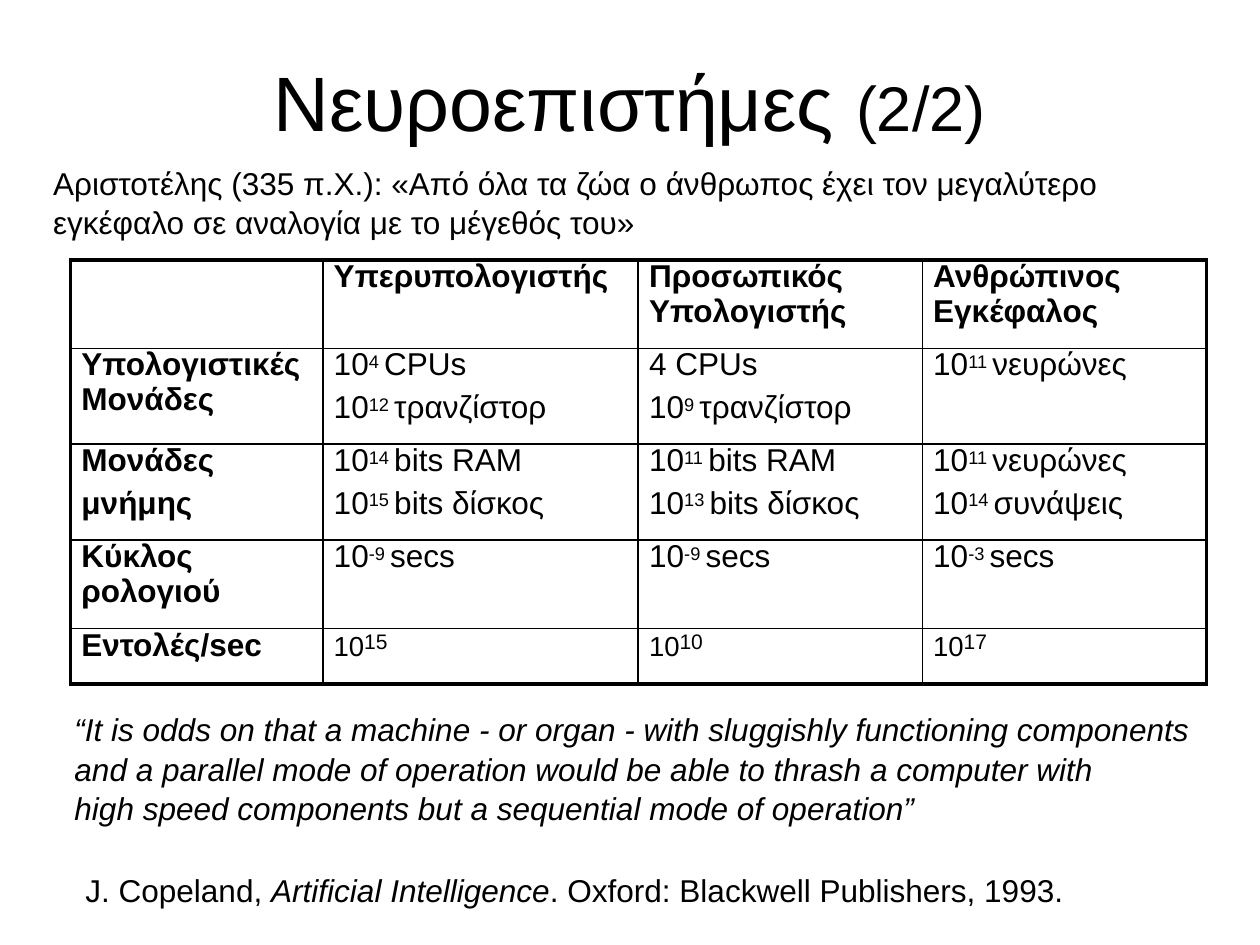
"""Build the Greek slide comparing computers with the human brain."""
from lxml.etree import SubElement
from pptx import Presentation
from pptx.dml.color import RGBColor
from pptx.enum.text import MSO_ANCHOR
from pptx.oxml import parse_xml
from pptx.oxml.ns import nsdecls, qn
from pptx.util import Cm, Pt

BLACK = RGBColor(0, 0, 0)
FONT = "Arial"
THICK, THIN = 2.25, 1

ROWS = [
    ["", "Υπερυπολογιστής", "Προσωπικός Υπολογιστής", "Ανθρώπινος Εγκέφαλος"],
    ["Υπολογιστικές Μονάδες", "10^4 ^CPUs\n10^12 ^τρανζίστορ",
     "4 CPUs\n10^9 ^τρανζίστορ", "10^11 ^νευρώνες"],
    ["Μονάδες\nμνήμης", "10^14 ^bits RΑΜ\n10^15 ^bits δίσκος",
     "10^11 ^bits RΑΜ\n10^13 ^bits δίσκος", "10^11 ^νευρώνες\n10^14 ^συνάψεις"],
    ["Κύκλος ρολογιού", "10^-9 ^secs", "10^-9 ^secs", "10^-3 ^secs"],
    ["Εντολές/sec", "10^15", "10^10", "10^17"],
]
COLUMN_WIDTHS = [5.08, 6.35, 5.72, 5.72]
ROW_HEIGHTS = [1.78, 1.93, 1.93, 1.78, 1.12]


class SlideWriter:
    """Hold the text style and the current slide."""

    def __init__(self, page):
        self.page = page

    def span(self, para, text, size=18, bold=False, italic=False, baseline=0):
        """Add one formatted run."""
        span = para.add_run()
        span.text = text
        font = span.font
        font.name, font.size, font.bold, font.italic = FONT, Pt(size), bold, italic
        font.color.rgb = BLACK
        if baseline:
            span._r.get_or_add_rPr().set("baseline", str(baseline * 1000))

    def layout(self, para, indent=0, before=0, spacing=1.04):
        """Set the indent and spacing of a paragraph."""
        para._p.get_or_add_pPr().set("marL", str(Cm(indent)))
        para.space_before = Pt(before)
        para.line_spacing = spacing

    def box(self, left, top, width, height, paragraphs, anchor=MSO_ANCHOR.TOP):
        """Add a text box from (layout, spans) pairs."""
        frame = self.page.shapes.add_textbox(
            Cm(left), Cm(top), Cm(width), Cm(height)).text_frame
        frame.word_wrap = True
        frame.vertical_anchor = anchor
        frame.margin_left = frame.margin_top = frame.margin_right = frame.margin_bottom = 0
        for index, (layout, spans) in enumerate(paragraphs):
            para = frame.add_paragraph() if index else frame.paragraphs[0]
            self.layout(para, **layout)
            for text, style in spans:
                self.span(para, text, **style)

    def border(self, cell, sides):
        """Draw the four borders of a cell, given their widths."""
        properties = cell._tc.get_or_add_tcPr()
        for index, (side, width) in enumerate(sides.items()):
            line = parse_xml(f'<a:ln{side} {nsdecls("a")} w="{Pt(width)}"/>')
            fill = SubElement(line, qn("a:solidFill"))
            SubElement(fill, qn("a:srgbClr"), val=str(BLACK))
            properties.insert(index, line)

    def cell(self, cell, text, bold, last):
        """Fill a cell; text between carets is superscript."""
        cell.margin_left = cell.margin_top = cell.margin_right = cell.margin_bottom = 0
        cell.fill.background()
        frame = cell.text_frame
        for index, line in enumerate(text.split("\n")):
            para = frame.add_paragraph() if index else frame.paragraphs[0]
            self.layout(para, 0.22, 4.4 if index else 0, 0.98)
            if last and not bold:
                para.line_spacing = Pt(19.2)
                base, power = line.split("^")
                self.span(para, base, 27, baseline=-15)
                self.span(para, power, 12)
                continue
            for position, part in enumerate(line.split("^")):
                if part:
                    self.span(para, part, bold=bold, baseline=23 * (position % 2))

    def table(self, left, top, rows, widths, heights):
        """Add a table with a thick outer frame."""
        table = self.page.shapes.add_table(
            len(rows), len(widths), Cm(left), Cm(top),
            Cm(sum(widths)), Cm(sum(heights))).table
        table.first_row = table.horz_banding = False
        for column, width in zip(table.columns, widths):
            column.width = Cm(width)
        bottom, right = len(rows) - 1, len(widths) - 1
        for r, texts in enumerate(rows):
            table.rows[r].height = Cm(heights[r])
            for c, text in enumerate(texts):
                cell = table.cell(r, c)
                self.cell(cell, text, r == 0 or c == 0, r == bottom)
                edges = {"L": c == 0, "R": c == right, "T": r == 0, "B": r == bottom}
                self.border(cell, {side: THICK if outer else THIN
                                   for side, outer in edges.items()})


def main():
    """Build and save the deck."""
    deck = Presentation()
    deck.slide_width, deck.slide_height = Cm(25.37), Cm(19.02)
    writer = SlideWriter(deck.slides.add_slide(deck.slide_layouts[6]))
    writer.box(1.04, 1.07, 21.21, 3.73, [
        ({"indent": 4.47}, [("Νευροεπιστήμες ", {"size": 44}), ("(2/2)", {"size": 36})]),
        ({"indent": 0.03, "before": 9.2}, [
            ("Αριστοτέλης (335 π.Χ.): «Από όλα τα ζώα ο άνθρωπος έχει τον "
             "μεγαλύτερο εγκέφαλο σε αναλογία με το μέγεθός του»", {})]),
    ], MSO_ANCHOR.MIDDLE)
    writer.table(1.42, 5.23, ROWS, COLUMN_WIDTHS, ROW_HEIGHTS)
    italic = {"italic": True}
    writer.box(1.47, 14.27, 22.5, 3.89, [
        ({"indent": 0.03}, [
            ("“It is odds on that a machine - or organ - with sluggishly functioning "
             "components and a parallel mode of operation would be able to thrash "
             "a computer with", italic)]),
        ({"indent": 0.03}, [
            ("high speed components but a sequential mode of operation”", italic)]),
        ({"indent": 0.25, "before": 24}, [
            ("J. Copeland, ", {}), ("Artificial Intelligence", italic),
            (". Oxford: Blackwell Publishers, 1993.", {})]),
    ])
    deck.save("out.pptx")


if __name__ == "__main__":
    main()
